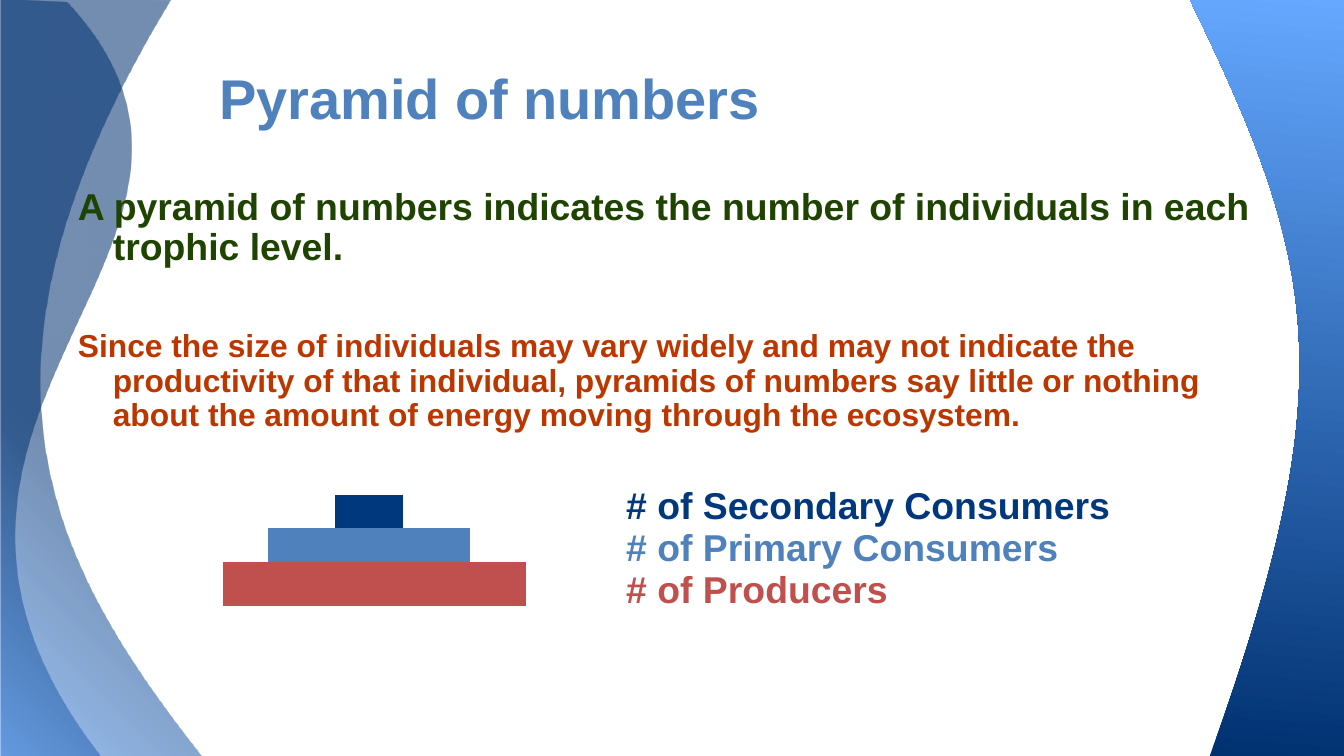
from lxml.etree import SubElement
from pptx import Presentation
from pptx.dml.color import RGBColor
from pptx.enum.shapes import MSO_SHAPE
from pptx.enum.text import MSO_ANCHOR
from pptx.oxml import parse_xml
from pptx.oxml.ns import nsdecls, qn
from pptx.util import Inches, Pt

HUES = {
    "navy": "00387E", "blue": "4F81BD", "red": "C0504D",
    "green": "1F4300", "rust": "BC3700",
    "deep": "003171", "sky": "549FFF", "light": "65A8FF",
}
CORNER = ('<a:path path="circle">'
          '<a:fillToRect l="0" t="100000" r="100000" b="0"/></a:path>')
UPWARD = '<a:lin ang="16500000" scaled="0"/>'
GLOW = [(0, "sky"), (41, "deep"), (100, "deep")]


class Deck:
    font = "Arial"

    def __init__(self):
        self.file = Presentation()
        self.file.slide_width = Inches(10)
        self.file.slide_height = Inches(10) * 9 // 16
        self.slide = self.file.slides.add_slide(self.file.slide_layouts[6])

    def hue(self, name):
        return RGBColor.from_string(HUES[name])

    def wave(self, start, parts, stops, shade, alpha=100):
        """Closed outline; a part holds one point (line) or three (Bézier)."""
        points = [(Inches(x), Inches(y)) for part in parts for x, y in part]
        pen = self.slide.shapes.build_freeform(*map(Inches, start), scale=1.0)
        pen.add_line_segments(points, close=True)
        shape = pen.convert_to_shape()
        geom = shape.element.spPr.find(qn("a:custGeom"))
        lines = iter(list(geom.iter(qn("a:lnTo"))))
        for part in parts:
            group = [next(lines) for _ in part]
            if len(group) == 3:
                curve = SubElement(group[0].getparent(), qn("a:cubicBezTo"))
                group[0].addprevious(curve)
                for line in group:
                    curve.append(line[0])
                    line.getparent().remove(line)
        marks = "".join(
            f'<a:gs pos="{pos * 1000}"><a:srgbClr val="{HUES[name]}">'
            f'<a:alpha val="{alpha * 1000}"/></a:srgbClr></a:gs>'
            for pos, name in stops)
        geom.addnext(parse_xml(
            f'<a:gradFill {nsdecls("a")} rotWithShape="1">'
            f'<a:gsLst>{marks}</a:gsLst>{shade}</a:gradFill>'))
        shape.line.fill.background()
        shape.shadow.inherit = False

    def bar(self, box, hue):
        shape = self.slide.shapes.add_shape(
            MSO_SHAPE.RECTANGLE, *map(Inches, box))
        shape.fill.solid()
        shape.fill.fore_color.rgb = self.hue(hue)
        shape.line.color.rgb = self.hue(hue)
        shape.line.width = Pt(4)
        edge = shape.element.spPr.find(qn("a:ln"))
        SubElement(edge, qn("a:miter"), lim="800000")
        shape.shadow.inherit = False

    def text(self, box, items, space=1.0, gap=0, hang=0,
             anchor=MSO_ANCHOR.TOP):
        """Items are (words, size, hue), one for each paragraph."""
        frame = self.slide.shapes.add_textbox(*map(Inches, box)).text_frame
        frame.word_wrap = True
        frame.vertical_anchor = anchor
        frame.margin_left = frame.margin_right = Inches(0.08)
        frame.margin_top = frame.margin_bottom = Inches(0.04)
        for i, (words, size, hue) in enumerate(items):
            para = frame.add_paragraph() if i else frame.paragraphs[0]
            para.text = words
            para.line_spacing = space
            if i:
                para.space_before = Pt(gap)
            if hang:
                props = para._p.get_or_add_pPr()
                props.set("marL", str(Inches(hang)))
                props.set("indent", str(-Inches(hang)))
            para.font.name = self.font
            para.font.size = Pt(size)
            para.font.bold = True
            para.font.color.rgb = self.hue(hue)


def main():
    deck = Deck()
    deck.wave((1.5, 5.62), [
        [(0, 5.62)], [(0, -0.02)], [(1.27, 0)],
        [(-0.38, 2.72), (0.33, 4.13), (1.5, 5.62)],
    ], GLOW, CORNER, 54)
    deck.wave((0.75, 5.62), [
        [(0.01, 5.62)], [(0.01, 0)], [(0.5, 0.02)],
        [(2.17, 1.82), (-1.22, 3.08), (0.75, 5.62)],
    ], GLOW, CORNER, 54)
    deck.wave((10.05, 5.63), [
        [(9, 5.63)], [(10.01, 2.84), (9.81, 1.96), (8.85, -0.01)],
        [(10.05, -0.01)],
    ], [(0, "deep"), (100, "light")], UPWARD)

    deck.text((1.55, 0.21, 9, 1.09), [("Pyramid of numbers", 30, "blue")],
              space=0.9, anchor=MSO_ANCHOR.MIDDLE)
    deck.text((0.5, 1.36, 9, 3.97), [
        ("A pyramid of numbers indicates the number of individuals in each "
         "trophic level.", 20, "green"),
        ("Since the size of individuals may vary widely and may not indicate "
         "the productivity of that individual, pyramids of numbers say little "
         "or nothing about the amount of energy moving through the "
         "ecosystem.", 17, "rust"),
    ], space=0.9, gap=33, hang=0.26)

    levels = [
        ("Secondary Consumers", "navy", 2.52, 0.45, 0.21, 4.47),
        ("Primary Consumers", "blue", 2.02, 1.45, 0.21, 3.46),
        ("Producers", "red", 1.69, 2.2, 0.27, 2.23),
    ]
    for i, (name, hue, left, wide, high, room) in enumerate(levels):
        deck.bar((left, 3.71 + 0.25 * i, wide, high), hue)
        deck.text((4.58, 3.55 + 0.31 * i, room, 0.37),
                  [(f"# of {name}", 20, hue)])
    deck.file.save("out.pptx")


if __name__ == "__main__":
    main()
